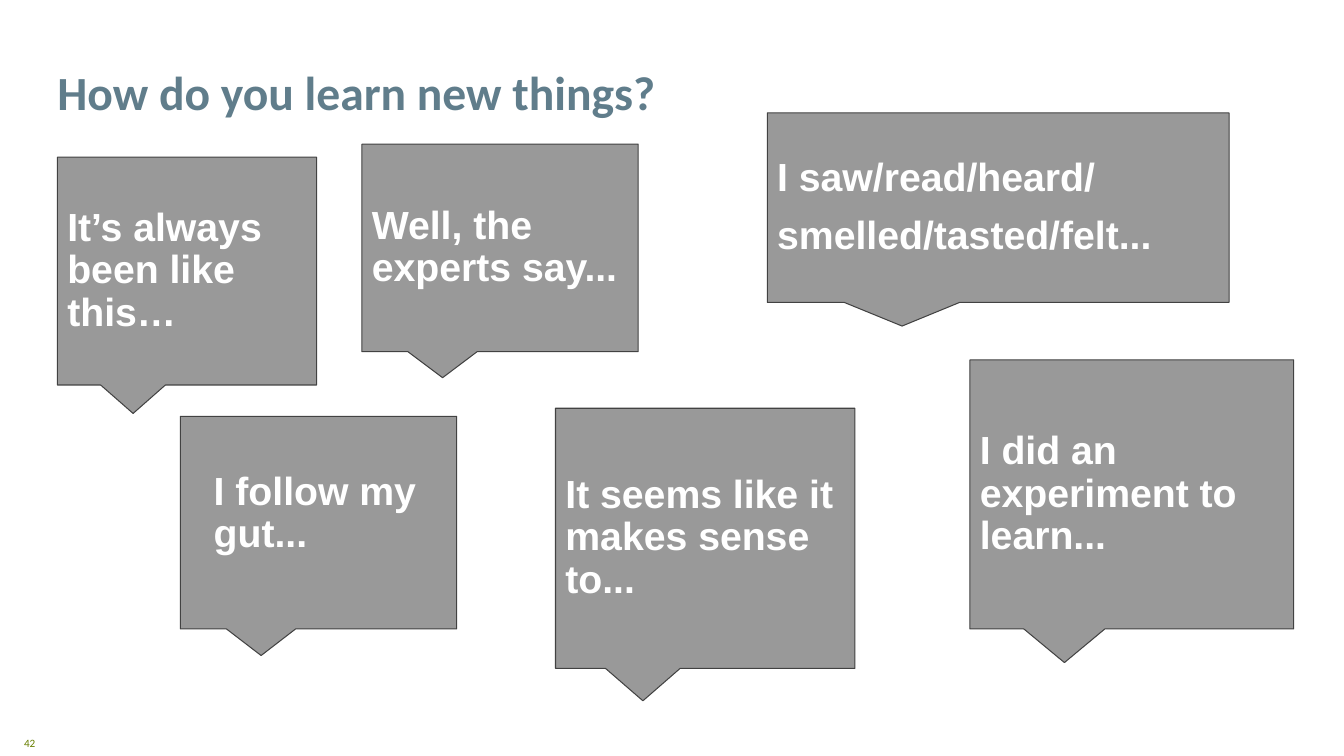
from dataclasses import dataclass

from pptx import Presentation
from pptx.dml.color import RGBColor
from pptx.enum.shapes import MSO_SHAPE
from pptx.enum.text import MSO_ANCHOR, MSO_AUTO_SIZE, PP_ALIGN
from pptx.util import Inches, Pt

CALLOUT = MSO_SHAPE.ROUNDED_RECTANGULAR_CALLOUT
MIDDLE = MSO_ANCHOR.MIDDLE
BOTTOM = MSO_ANCHOR.BOTTOM
LEFT = PP_ALIGN.LEFT
RIGHT = PP_ALIGN.RIGHT
NO_AUTOFIT = MSO_AUTO_SIZE.NONE
TITLE_ONLY = 5


@dataclass(frozen=True)
class Theme:
    heading_font: str = "Calibri"
    speech_font: str = "Arial"
    heading: RGBColor = RGBColor(0x60, 0x7D, 0x8B)
    page_number: RGBColor = RGBColor(0x68, 0x7F, 0x00)
    bubble: RGBColor = RGBColor(0x99, 0x99, 0x99)
    outline: RGBColor = RGBColor(0x42, 0x42, 0x42)
    speech: RGBColor = RGBColor(0xFF, 0xFF, 0xFF)
    heading_size: int = 34
    speech_size: int = 28
    page_number_size: int = 8


THEME = Theme()
TAIL = (-0.208, 0.625, 0)
SPEECHES = [
    ((1.79, 4.13, 2.74, 2.11), ["I follow my gut..."],
     {"indent": 0.23, "bottom": 0.27}),
    ((3.59, 1.43, 2.74, 2.06), ["Well, the experts say..."], {}),
    ((0.57, 1.56, 2.57, 2.26), ["It’s always been like this…"],
     {"space_before": 0}),
    ((5.51, 4.05, 2.97, 2.58), ["It seems like it makes sense to..."], {}),
    ((7.61, 1.12, 4.58, 1.88),
     ["I saw/read/heard/", "smelled/tasted/felt..."], {}),
    ((9.62, 3.57, 3.21, 2.67), ["I did an experiment to learn..."], {}),
]


def style_font(paragraph, name, size, color, bold=False):
    font = paragraph.font
    font.name = name
    font.size = Pt(size)
    font.bold = bold
    font.color.rgb = color


def set_frame(frame, anchor, vertical, bottom=None):
    frame.word_wrap = True
    frame.auto_size = NO_AUTOFIT
    frame.vertical_anchor = anchor
    frame.margin_left = frame.margin_right = Inches(0.1)
    frame.margin_top = Inches(vertical)
    frame.margin_bottom = Inches(vertical if bottom is None else bottom)


def add_title(slide, text):
    title = slide.shapes.title
    title.left, title.top = Inches(0.47), Inches(0.26)
    title.width, title.height = Inches(10.25), Inches(0.98)
    set_frame(title.text_frame, BOTTOM, 0.05)
    title.text_frame.text = text
    heading = title.text_frame.paragraphs[0]
    heading.alignment = LEFT
    style_font(heading, THEME.heading_font, THEME.heading_size,
               THEME.heading, bold=True)


def add_page_number(slide, number):
    box = slide.shapes.add_textbox(
        Inches(0), Inches(7.25), Inches(0.45), Inches(0.25))
    set_frame(box.text_frame, MIDDLE, 0.05)
    box.text_frame.text = number
    label = box.text_frame.paragraphs[0]
    label.alignment = RIGHT
    style_font(label, THEME.heading_font, THEME.page_number_size,
               THEME.page_number)


def add_speech(slide, bounds, lines, indent=0, bottom=0.1, space_before=11):
    bubble = slide.shapes.add_shape(CALLOUT, *map(Inches, bounds))
    for index, value in enumerate(TAIL):
        bubble.adjustments[index] = value
    bubble.shadow.inherit = False
    bubble.fill.solid()
    bubble.fill.fore_color.rgb = THEME.bubble
    bubble.line.color.rgb = THEME.outline
    bubble.line.width = Pt(0.75)
    frame = bubble.text_frame
    set_frame(frame, MIDDLE, 0.1, bottom)
    frame.margin_left = Inches(0.1 + indent)
    frame.text = "\n".join(lines)
    for paragraph in frame.paragraphs:
        paragraph.alignment = LEFT
        paragraph.line_spacing = 0.9
        paragraph.space_before = Pt(space_before)
        style_font(paragraph, THEME.speech_font, THEME.speech_size,
                   THEME.speech, bold=True)


def main():
    presentation = Presentation()
    presentation.slide_width = Inches(13.33)
    presentation.slide_height = Inches(7.5)
    slide = presentation.slides.add_slide(
        presentation.slide_layouts[TITLE_ONLY])
    add_title(slide, "How do you learn new things?")
    add_page_number(slide, "42")
    for bounds, lines, options in SPEECHES:
        add_speech(slide, bounds, lines, **options)
    presentation.save("out.pptx")


if __name__ == "__main__":
    main()
